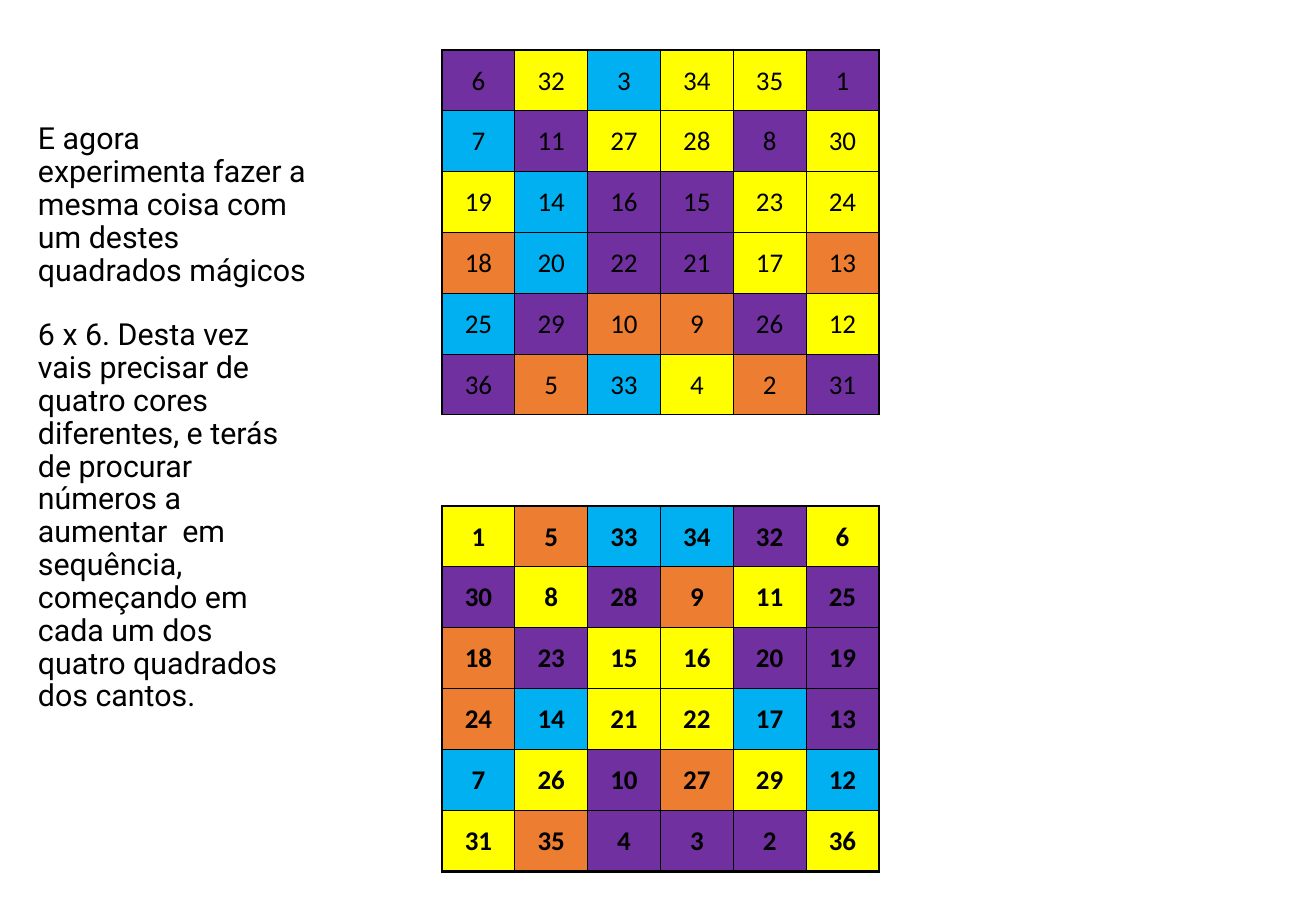
import lxml.etree
import pptx
import pptx.dml.color
import pptx.enum.text
import pptx.oxml.ns
import pptx.util

EMU_PER_PX = 7526
COLORS = {"P": "7030A0", "Y": "FFFF00", "B": "00B0F0", "O": "ED7D31", "ink": "000000"}

INSTRUCTIONS = [
    "E agora experimenta fazer a mesma coisa com um destes quadrados mágicos",
    "6 x 6. Desta vez vais precisar de quatro cores diferentes, e terás de procurar "
    "números a aumentar  em sequência, começando em cada um dos quatro quadrados dos cantos.",
]
# Each cell is a colour key followed by its number.
FIRST_SQUARE = [
    "P6 Y32 B3 Y34 Y35 P1",
    "B7 P11 Y27 Y28 P8 Y30",
    "Y19 B14 P16 P15 Y23 Y24",
    "O18 B20 P22 P21 Y17 O13",
    "B25 P29 O10 O9 P26 Y12",
    "P36 O5 B33 Y4 O2 P31",
]
SECOND_SQUARE = [
    "Y1 O5 B33 B34 P32 Y6",
    "P30 Y8 P28 O9 Y11 P25",
    "O18 P23 Y15 Y16 P20 P19",
    "O24 B14 Y21 Y22 B17 P13",
    "B7 Y26 P10 O27 Y29 B12",
    "Y31 O35 P4 P3 P2 Y36",
]


def px(length):
    return pptx.util.Emu(round(length * EMU_PER_PX))


def color(key):
    return pptx.dml.color.RGBColor.from_string(COLORS[key])


def style_font(font, name, size, bold=False):
    font.name = name
    font.size = pptx.util.Pt(size)
    font.bold = bold
    font.color.rgb = color("ink")


def add_borders(cell, width):
    properties = cell._tc.get_or_add_tcPr()
    for side in "LRTB":
        line = lxml.etree.SubElement(
            properties, pptx.oxml.ns.qn(f"a:ln{side}"), w=str(pptx.util.Pt(width)))
        fill = lxml.etree.SubElement(line, pptx.oxml.ns.qn("a:solidFill"))
        lxml.etree.SubElement(fill, pptx.oxml.ns.qn("a:srgbClr"), val=COLORS["ink"])


def add_instructions(slide, left, top, width, height):
    text_box = slide.shapes.add_textbox(px(left), px(top), px(width), px(height))
    text_frame = text_box.text_frame
    text_frame.word_wrap = True
    text_frame.vertical_anchor = pptx.enum.text.MSO_ANCHOR.MIDDLE
    text_frame.text = "\n".join(INSTRUCTIONS)
    for index, paragraph in enumerate(text_frame.paragraphs):
        paragraph.line_spacing = 0.9
        paragraph.space_before = pptx.util.Pt(19 if index else 0)
        for run in paragraph.runs:
            style_font(run.font, "Roboto", 18)


def add_number_table(slide, left, top, width, height, rows, border, colored, bold=False):
    size = len(rows)
    frame = slide.shapes.add_table(size, size, px(left), px(top), px(width), px(height))
    table = frame.table
    table.first_row = table.horz_banding = False
    for column in table.columns:
        column.width = px(width / size)
    for row_index, row in enumerate(rows):
        table.rows[row_index].height = px(height / size)
        for column_index, entry in enumerate(row.split()):
            cell = table.cell(row_index, column_index)
            add_borders(cell, border)
            if colored:
                cell.fill.solid()
                cell.fill.fore_color.rgb = color(entry[0])
            else:
                cell.fill.background()
            cell.margin_left = cell.margin_right = cell.margin_top = px(1)
            cell.margin_bottom = 0
            cell.vertical_anchor = pptx.enum.text.MSO_ANCHOR.MIDDLE
            cell.text_frame.text = entry[1:]
            paragraph = cell.text_frame.paragraphs[0]
            paragraph.alignment = pptx.enum.text.PP_ALIGN.CENTER
            style_font(paragraph.runs[0].font, "Calibri", 16, bold)


def add_magic_square(slide, left, top, width, height, rows, outline_height, bold=False):
    """Place a coloured square on a plain one whose heavier lines edge it."""
    add_number_table(slide, left, top, width, outline_height, rows, 1, colored=False)
    add_number_table(slide, left, top, width, height, rows, 0.5, colored=True, bold=bold)


def main():
    presentation = pptx.Presentation()
    presentation.slide_width = px(1316)
    presentation.slide_height = px(911)
    slide = presentation.slides.add_slide(presentation.slide_layouts[6])
    add_instructions(slide, 26, 0, 293, 837)
    add_magic_square(slide, 442, 50, 437, 365, FIRST_SQUARE, 365)
    add_magic_square(slide, 442, 506, 437, 365, SECOND_SQUARE, 366, bold=True)
    presentation.save("out.pptx")


if __name__ == "__main__":
    main()
